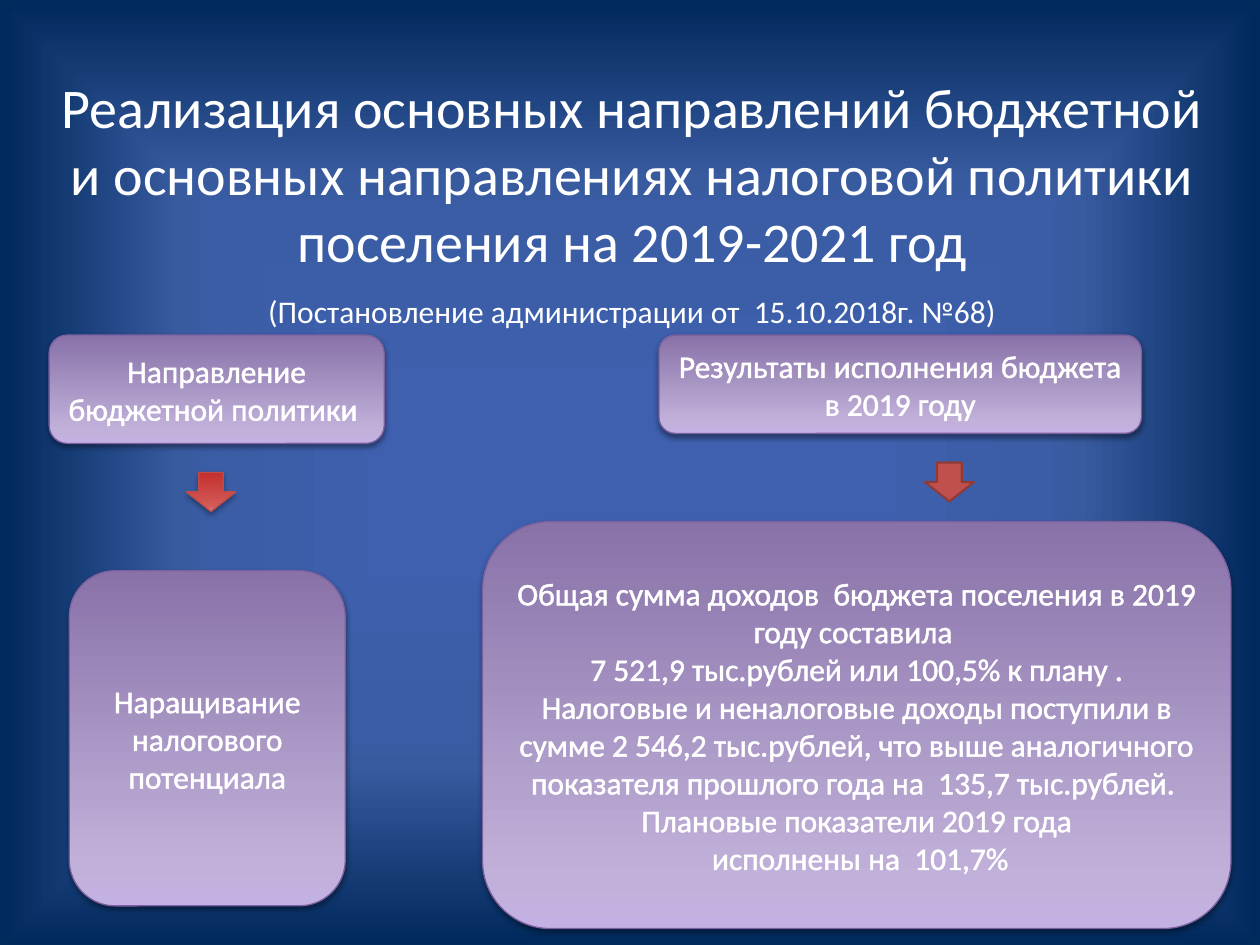
from dataclasses import dataclass

from lxml.etree import SubElement
from pptx import Presentation
from pptx.dml.color import RGBColor
from pptx.enum.shapes import MSO_SHAPE
from pptx.enum.text import MSO_ANCHOR, MSO_AUTO_SIZE, PP_ALIGN
from pptx.oxml.ns import qn
from pptx.util import Inches, Pt


@dataclass(frozen=True)
class Theme:
    font: str = "Calibri"
    title_size: int = 32
    body_size: int = 18
    text: str = "FFFFFF"
    text_outline: float = 0.83
    background: tuple = ((13, "3F60AF"), (54, "3A5DA6"), (62, "385A9F"), (100, "00295C"))
    panel: tuple = ((0, "C4B1E3"), (12, "C1B1DA"), (100, "8872A8"))
    panel_line: str = "7D60A0"
    red: tuple = ((0, "E37F7D"), (12, "D35B59"), (100, "C32F2B"))
    red_line: str = "BF4C48"
    flat_red: str = "C0504D"
    flat_red_line: str = "8E3B39"


THEME = Theme()


def add_xml(parent, tag, **attributes):
    return SubElement(parent, qn(tag), {key: str(value) for key, value in attributes.items()})


def set_gradient(fill, owner, stops, from_centre=False):
    """Fill with colour stops, rising from the bottom or spreading from the centre."""
    fill.gradient()
    gradient = next(owner.iter(qn("a:gradFill")))
    for child in list(gradient):
        gradient.remove(child)
    stop_list = add_xml(gradient, "a:gsLst")
    for position, colour in stops:
        stop = add_xml(stop_list, "a:gs", pos=position * 1000)
        add_xml(stop, "a:srgbClr", val=colour)
    if from_centre:
        spread = add_xml(gradient, "a:path", path="shape")
        add_xml(spread, "a:fillToRect", l=50000, t=50000, r=50000, b=50000)
    else:
        add_xml(gradient, "a:lin", ang=270 * 60000, scaled=0)


def add_shadow(shape, opacity, distance):
    effects = shape._element.spPr.find(qn("a:effectLst"))
    shadow = add_xml(effects, "a:outerShdw", blurRad=Pt(3.1), dist=Pt(distance),
                     dir=90 * 60000, rotWithShape=0)
    colour = add_xml(shadow, "a:srgbClr", val="000000")
    add_xml(colour, "a:alpha", val=opacity * 1000)


def write_text(frame, *paragraphs, size=THEME.body_size, align=PP_ALIGN.CENTER,
               anchor=MSO_ANCHOR.MIDDLE, auto_size=MSO_AUTO_SIZE.NONE, outline=0):
    frame.word_wrap = True
    frame.auto_size = auto_size
    frame.vertical_anchor = anchor
    for index, text in enumerate(paragraphs):
        paragraph = frame.paragraphs[0] if index == 0 else frame.add_paragraph()
        paragraph.alignment = align
        run = paragraph.add_run()
        run.text = text
        run.font.name = THEME.font
        run.font.size = Pt(size)
        run.font.color.rgb = RGBColor.from_string(THEME.text)
        if outline:
            properties = run.font._element
            line = add_xml(properties, "a:ln", w=Pt(outline))
            properties.insert(0, line)  # the outline precedes the fill
            add_xml(add_xml(line, "a:solidFill"), "a:srgbClr", val=THEME.text)


def add_preset(slide, preset, box, fill, line, line_width=0.75):
    """Add a shape whose fill is one colour or a tuple of gradient stops."""
    shape = slide.shapes.add_shape(preset, *map(Inches, box))
    shape.shadow.inherit = False
    if isinstance(fill, str):
        shape.fill.solid()
        shape.fill.fore_color.rgb = RGBColor.from_string(fill)
    else:
        set_gradient(shape.fill, shape._element.spPr, fill)
    shape.line.color.rgb = RGBColor.from_string(line)
    shape.line.width = Pt(line_width)
    return shape


def add_panel(slide, box, *paragraphs):
    panel = add_preset(slide, MSO_SHAPE.ROUNDED_RECTANGLE, box, THEME.panel, THEME.panel_line)
    add_shadow(panel, opacity=38, distance=1.6)
    write_text(panel.text_frame, *paragraphs, outline=THEME.text_outline)


def add_heading(slide):
    title = slide.shapes.title
    title.left, title.top, title.width, title.height = map(Inches, (0.27, 0.49, 9.5, 1.77))
    write_text(title.text_frame,
               "Реализация основных направлений бюджетной и основных направлениях "
               "налоговой политики поселения на 2019-2021 год", size=THEME.title_size)
    decree = slide.shapes.add_textbox(*map(Inches, (2.03, 2.27, 7.19, 0.4)))
    write_text(decree.text_frame, "(Постановление администрации от  15.10.2018г. №68)",
               align=PP_ALIGN.LEFT, anchor=MSO_ANCHOR.TOP,
               auto_size=MSO_AUTO_SIZE.SHAPE_TO_FIT_TEXT)


def main():
    presentation = Presentation()
    presentation.slide_width, presentation.slide_height = Inches(10), Inches(7.5)
    slide = presentation.slides.add_slide(presentation.slide_layouts[5])
    set_gradient(slide.background.fill, slide._element, THEME.background, from_centre=True)
    add_heading(slide)

    # Column headings
    add_panel(slide, (0.39, 2.66, 2.66, 0.86), "Направление бюджетной политики ")
    add_panel(slide, (5.23, 2.66, 3.83, 0.78), "Результаты исполнения бюджета в 2019 году")

    # Policy direction and its results
    add_panel(slide, (0.55, 4.53, 2.19, 2.66), "Наращивание налогового потенциала")
    add_panel(slide, (3.83, 4.14, 5.94, 3.23),
              "Общая сумма доходов  бюджета поселения в 2019 году составила ",
              "7 521,9 тыс.рублей или 100,5% к плану . Налоговые и неналоговые доходы "
              "поступили в сумме 2 546,2 тыс.рублей, что выше аналогичного показателя "
              "прошлого года на  135,7 тыс.рублей. ",
              "Плановые показатели 2019 года",
              " исполнены на  101,7%")

    # Arrows from the headings down to the panels
    policy_arrow = add_preset(slide, MSO_SHAPE.DOWN_ARROW, (1.48, 3.75, 0.39, 0.31),
                              THEME.red, THEME.red_line)
    add_shadow(policy_arrow, opacity=35, distance=1.8)
    add_preset(slide, MSO_SHAPE.DOWN_ARROW, (7.34, 3.67, 0.39, 0.31),
               THEME.flat_red, THEME.flat_red_line, line_width=1.25)

    presentation.save("out.pptx")


if __name__ == "__main__":
    main()
